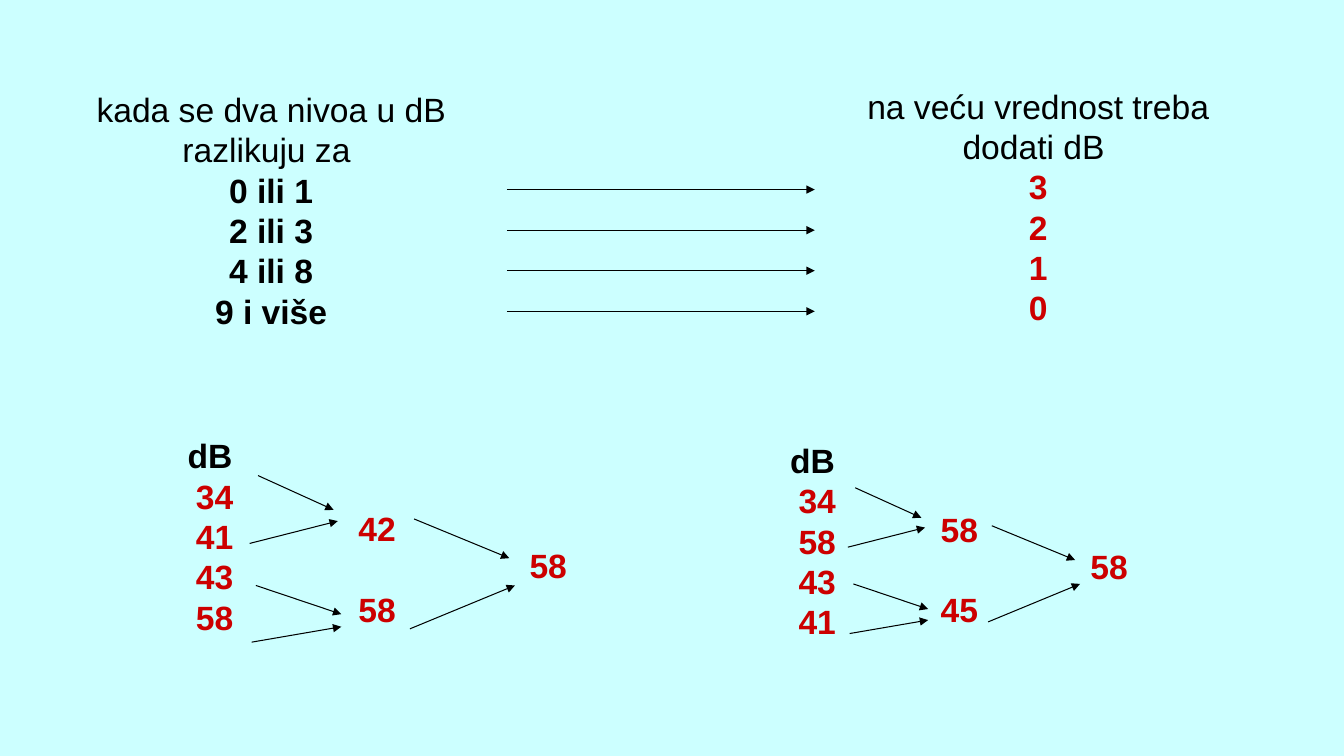
from lxml import etree
from pptx import Presentation
from pptx.dml.color import RGBColor
from pptx.enum.shapes import MSO_CONNECTOR
from pptx.enum.text import MSO_ANCHOR, PP_ALIGN
from pptx.oxml.ns import qn
from pptx.util import Pt

STRAIGHT = MSO_CONNECTOR.STRAIGHT
MIDDLE = MSO_ANCHOR.MIDDLE
CENTER = PP_ALIGN.CENTER

BLACK, RED, PALE_CYAN = "000000", "CC0000", "CCFFFF"
LINE_HEIGHT = 28.8

# Arrows of an addition tree, from its top left corner: x1, y1, x2, y2
TREE_ARROWS = [
    (78.5, 51, 132.5, 75.5),
    (72.5, 99.5, 135.5, 83.5),
    (77, 129.5, 138, 150),
    (74, 170, 138, 159),
    (190, 82, 258, 110),
    (187, 160.5, 262, 129.5),
]


def color(value):
    return RGBColor.from_string(value)


def add_text(shapes, left, top, width, height):
    box = shapes.add_textbox(Pt(left), Pt(top), Pt(width), Pt(height))
    box.text_frame.word_wrap = True
    box.text_frame.vertical_anchor = MIDDLE
    return box.text_frame


def add_line(frame, text, ink=RED, bold=True, before=0):
    para = frame.paragraphs[0]
    if para.runs:
        para = frame.add_paragraph()
        para.space_before = Pt(before)
    para.alignment = CENTER
    para.line_spacing = Pt(LINE_HEIGHT)
    span = para.add_run()
    span.text = text
    span.font.name = "Arial"
    span.font.size = Pt(24)
    span.font.bold = bold
    span.font.color.rgb = color(ink)


def add_arrow(shapes, x1, y1, x2, y2):
    arrow = shapes.add_connector(STRAIGHT, Pt(x1), Pt(y1), Pt(x2), Pt(y2))
    arrow.line.color.rgb = color(BLACK)
    arrow.line.width = Pt(0.75)
    outline = arrow.line._get_or_add_ln()
    etree.SubElement(outline, qn("a:tailEnd"), type="triangle")
    etree.SubElement(arrow._element.spPr, qn("a:effectLst"))


def add_rule_column(page, place, heading, values, ink):
    frame = add_text(page.shapes, *place)
    add_line(frame, heading, ink=BLACK, bold=False)
    for value in values:
        add_line(frame, value, ink=ink)


def add_tree(page, left, top, scale, levels, sums, total):
    shapes = page.shapes.add_group_shape().shapes

    def place(x, y):
        return left + x * scale, top + y * scale

    def column(x, y, height):
        return add_text(shapes, *place(x, y), 95 * scale, height * scale)

    # Levels to be added
    frame = column(0, 0, 188.5)
    add_line(frame, "dB ", ink=BLACK)
    for level in levels:
        add_line(frame, level)

    # Pair sums, one line apart, and the total
    frame = column(116, 40.3, 154)
    for pair_sum in sums:
        add_line(frame, pair_sum, before=LINE_HEIGHT)
    add_line(column(238.3, 38.2, 154), total)

    for x1, y1, x2, y2 in TREE_ARROWS:
        add_arrow(shapes, *place(x1, y1), *place(x2, y2))


def main():
    deck = Presentation()
    deck.slide_width, deck.slide_height = Pt(960), Pt(540)
    page = deck.slides.add_slide(deck.slide_layouts[6])
    page.background.fill.solid()
    page.background.fill.fore_color.rgb = color(PALE_CYAN)

    # Rule: level difference on the left, correction on the right
    add_rule_column(page, (31.7, 60, 324, 180),
                    "kada se dva nivoa u dB razlikuju za ",
                    ["0 ili 1", "2 ili 3", "4 ili 8", "9 i više"], BLACK)
    add_rule_column(page, (579.6, 75.6, 324, 144),
                    "na veću vrednost treba dodati dB ",
                    ["3", "2", "1", "0"], RED)
    for row in range(4):
        y = 135.4 + 29 * row
        add_arrow(page.shapes, 362, y, 582, y)

    # Two orders of adding the same levels
    add_tree(page, 105.8, 288.7, 1,
             ["34", "41", "43", "58"], ["42", "58"], "58")
    add_tree(page, 542.2, 303.8, 0.875,
             ["34", "58", "43", "41"], ["58", "45"], "58")

    deck.save("out.pptx")


if __name__ == "__main__":
    main()
